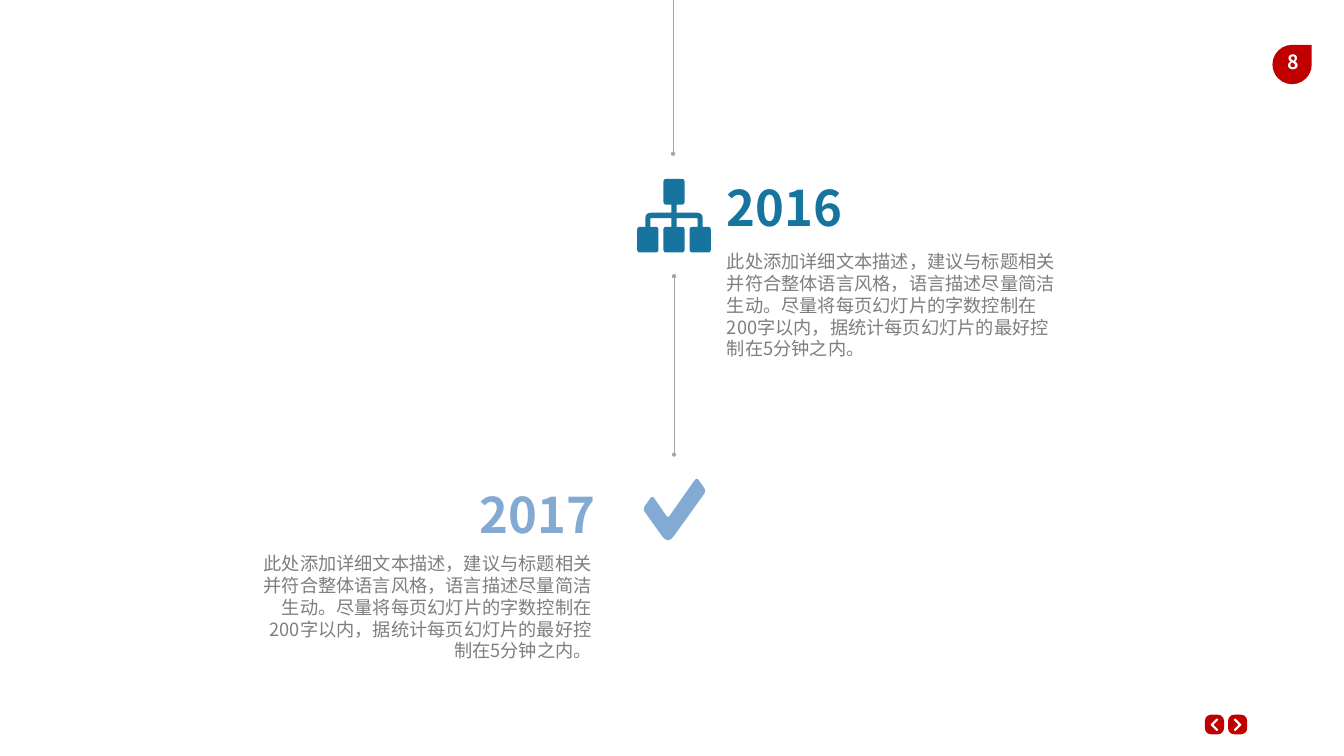
"""Build a timeline slide with two years, icons and page controls."""
from lxml import etree
from pptx import Presentation
from pptx.dml.color import RGBColor
from pptx.enum.shapes import MSO_CONNECTOR, MSO_SHAPE
from pptx.enum.text import MSO_ANCHOR, PP_ALIGN
from pptx.oxml.ns import qn
from pptx.util import Inches, Pt

LINE = MSO_CONNECTOR.STRAIGHT
DROP, ROUND = MSO_SHAPE.TEAR, MSO_SHAPE.ROUNDED_RECTANGLE
LEFT, MID, RIGHT = PP_ALIGN.LEFT, PP_ALIGN.CENTER, PP_ALIGN.RIGHT
TOP, MIDDLE = MSO_ANCHOR.TOP, MSO_ANCHOR.MIDDLE

FONT = "Noto Sans CJK SC"
RED, WHITE, GREY, RULE = "C00000", "FFFFFF", "7E7E7E", "A6A6A6"
TEAL, BLUE = "16749F", "82AAD2"
BODY = (
    "此处添加详细文本描述，建议与标题相关并符合整体语言风格，语言描述尽量简洁生动。"
    "尽量将每页幻灯片的字数控制在200字以内，据统计每页幻灯片的最好控制在5分钟之内。"
)
YEARS = [
    ("2016", TEAL, LEFT, (14.22, 3.47, 8.41, 1.29), (14.22, 4.87, 7.14, 2.13)),
    ("2017", BLUE, RIGHT, (3.59, 9.56, 8.41, 1.29), (4.8, 10.86, 7.14, 2.04)),
]
RULES = [
    (13.37, 5.48, 9.02, ("headEnd", "tailEnd")),
    (13.35, 3.05, 0, ("headEnd",)),
]
AXIS = 13.37
TREE = [
    (0.21, 3.55, 0.06), (0.21, 4.06, 0.06), (0.05, 4.06, 0), (0.05, 4.22, 0),
    (0.57, 4.22, 0.12), (0.57, 4.5, 0), (0.73, 4.5, 0.06), (0.73, 5.01, 0.06),
    (0.31, 5.01, 0.06), (0.31, 4.5, 0.06), (0.47, 4.5, 0), (0.47, 4.33, 0.02),
    (0.05, 4.33, 0), (0.05, 4.5, 0), (0.21, 4.5, 0.06), (0.21, 5.01, 0.06),
]
CHECK = [
    (12.75, 10.1, 0.07), (12.94, 9.83, 0.07), (13.25, 10.28, 0.06),
    (13.82, 9.47, 0.07), (14.01, 9.74, 0.07), (13.25, 10.8, 0.2),
]
ARROW = [(-0.05, -0.13), (0.08, 0), (-0.05, 0.13), (-0.08, 0.1), (0.02, 0), (-0.08, -0.1)]
BUTTONS = [(23.9, -1), (24.36, 1)]


def color(code):
    return RGBColor.from_string(code)


def paint(shape, code):
    shape.shadow.inherit = False
    shape.fill.solid()
    shape.fill.fore_color.rgb = color(code)
    shape.line.fill.background()


def toward(start, end, dist):
    dx, dy = end[0] - start[0], end[1] - start[1]
    part = dist / (dx * dx + dy * dy) ** 0.5
    return start[0] + dx * part, start[1] + dy * part


def soften(corners):
    """Replace each corner (x, y, reach) by points on a curve."""
    points = []
    for i, (x, y, reach) in enumerate(corners):
        if not reach:
            points.append((x, y))
            continue
        a = toward((x, y), corners[i - 1], reach)
        b = toward((x, y), corners[(i + 1) % len(corners)], reach)
        for t in (0, 0.25, 0.5, 0.75, 1):
            u = 1 - t
            points.append((
                u * u * a[0] + 2 * u * t * x + t * t * b[0],
                u * u * a[1] + 2 * u * t * y + t * t * b[1],
            ))
    return points


def outline(shapes, corners, code):
    first, *rest = [(Inches(x), Inches(y)) for x, y in soften(corners)]
    pen = shapes.build_freeform(*first)
    pen.add_line_segments(rest, close=True)
    paint(pen.convert_to_shape(), code)


def write(shapes, text, box, size, code, align, anchor=TOP, bold=False, wrap=True):
    frame = shapes.add_textbox(*map(Inches, box)).text_frame
    frame.word_wrap = wrap
    frame.vertical_anchor = anchor
    frame.margin_left = frame.margin_right = Inches(0.2)
    frame.margin_top = frame.margin_bottom = Inches(0.1)
    para = frame.paragraphs[0]
    para.text, para.alignment = text, align
    font = para.font
    font.name, font.size, font.bold = FONT, Pt(size), bold
    font.color.rgb = color(code)
    props = para._p.pPr.find(qn("a:defRPr"))
    etree.SubElement(props, qn("a:ea"), typeface=FONT)


def rule(shapes, x, top, end, dots):
    line = shapes.add_connector(LINE, *map(Inches, (x, top, x, end)))
    line.line.width = Pt(0.5)
    line.line.color.rgb = color(RULE)
    props = line._element.spPr
    for dot in dots:
        etree.SubElement(props.find(qn("a:ln")), qn("a:" + dot), type="oval")
    etree.SubElement(props, qn("a:effectLst"))


def main():
    deck = Presentation()
    deck.slide_width, deck.slide_height = Inches(26.66), Inches(15)
    shapes = deck.slides.add_slide(deck.slide_layouts[6]).shapes

    for left, way in BUTTONS:
        button = shapes.add_shape(ROUND, *map(Inches, (left, 14.18, 0.38, 0.39)))
        button.adjustments[0] = 0.32
        paint(button, RED)
        tip = [(left + 0.19 + way * x, 14.38 + y, 0.02) for x, y in ARROW]
        outline(shapes, tip, WHITE)

    paint(shapes.add_shape(DROP, *map(Inches, (25.24, 0.89, 0.78, 0.78))), RED)
    write(shapes, "8", (25.16, 0.9, 0.97, 0.67), 28, WHITE, MID, bold=True, wrap=False)

    for year, code, align, head, body in YEARS:
        write(shapes, BODY, body, 26, GREY, align)
        write(shapes, year, head, 70, code, align, MIDDLE, True)
    for item in RULES:
        rule(shapes, *item)

    half = [(AXIS + x, y, reach) for x, y, reach in TREE]
    other = [(AXIS - x, y, reach) for x, y, reach in reversed(TREE)]
    outline(shapes, half + other, TEAL)
    outline(shapes, CHECK, BLUE)
    deck.save("out.pptx")


if __name__ == "__main__":
    main()
